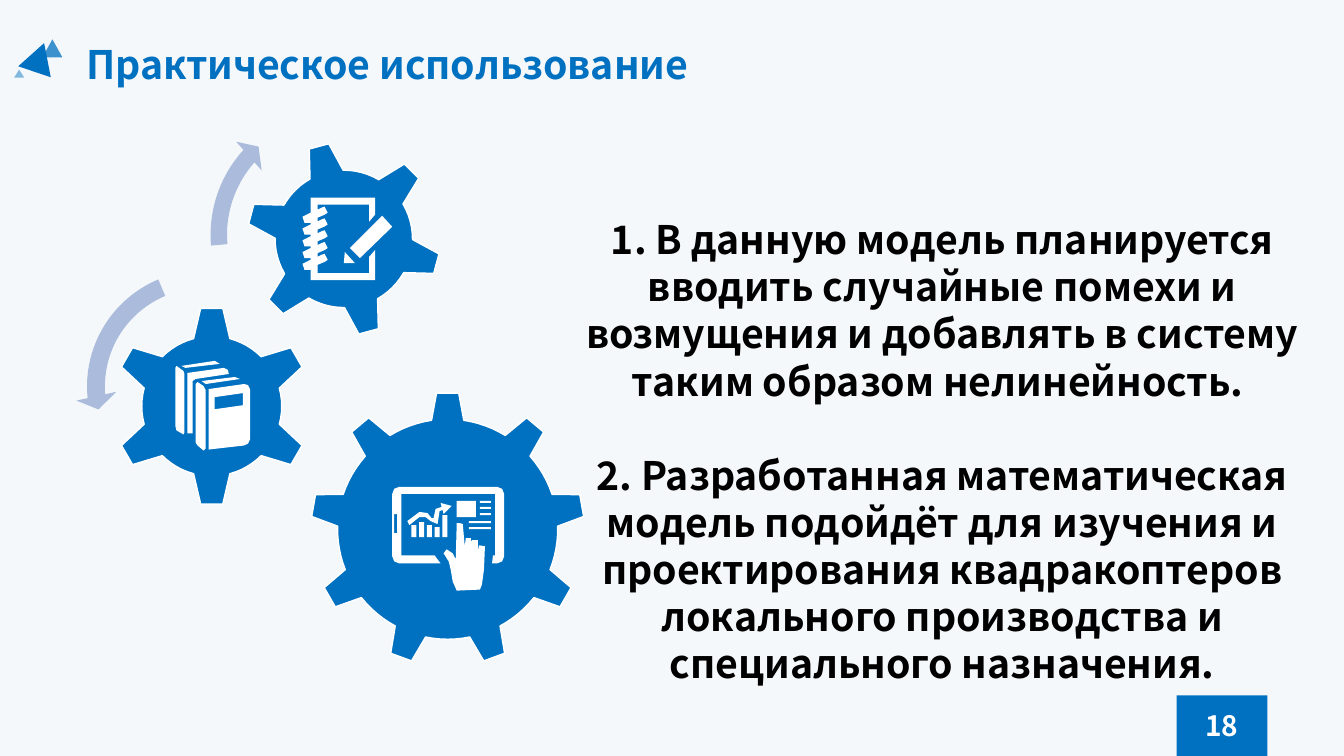
import math

import lxml.etree
import pptx
import pptx.dml.color
import pptx.enum.shapes
import pptx.enum.text
import pptx.oxml.ns
import pptx.util
from pptx.util import Inches

SHAPE = pptx.enum.shapes.MSO_SHAPE
ALIGN = pptx.enum.text.PP_ALIGN
FONT = "Noto Sans CJK SC"
COLORS = {"back": "F5F8FB", "blue": "0070C0", "arrow": "ABBBDC", "white": "FFFFFF", "black": "000000"}

TITLE = "Практическое использование"
POINTS = [
    "1. В данную модель планируется вводить случайные помехи и возмущения "
    "и добавлять в систему таким образом нелинейность. ",
    "2. Разработанная математическая модель подойдёт для изучения и проектирования "
    "квадракоптеров локального производства и специального назначения.",
]
PAGE_NUMBER = "18"

# left, top, width, height, rotation, opacity in percent
TRIANGLES = [
    (0.42, 0.39, 0.2, 0.18, 0, 75),
    (0.22, 0.42, 0.34, 0.3, 18.5, 100),
    (0.14, 0.69, 0.1, 0.08, 0, 47),
]
# centre, teeth, turn in degrees, (half width, distance from centre) of tooth root and tip
GEARS = [
    ((4.44, 5.25), 9, 0, (0.16, 1.08), (0.11, 1.35)),
    ((2.1, 4.03), 6, 0, (0.18, 0.67), (0.11, 0.97)),
    ((3.41, 2.37), 6, -15, (0.17, 0.66), (0.1, 0.95)),
]
ARROWS = [
    (SHAPE.LEFT_CIRCULAR_ARROW, (0.75, 2.57, 2.53, 2.53), (0.07, 4.3, 104.89, 148.38, 0.08)),
    (SHAPE.CIRCULAR_ARROW, (1.98, 0.97, 2.72, 2.72), (0.06, 3.94, 133.14, 105.08, 0.07)),
]


def rectangle(left, top, right, bottom):
    return [(left, top), (right, top), (right, bottom), (left, bottom)]


BOOKS = [
    [(1.86, 3.7), (2.22, 3.65), (2.26, 3.67), (2.27, 3.71), (1.94, 3.76), (1.91, 3.78), (1.91, 4.3), (1.86, 4.3)],
    [(2.13, 3.94), (2.13, 4.06), (2.41, 4.02), (2.41, 3.9)],
    [(2.07, 3.86), (2.07, 4.46), (2.42, 4.42), (2.46, 4.4), (2.48, 4.36), (2.48, 3.86), (2.46, 3.82), (2.42, 3.81)],
    [(1.96, 3.79), (1.94, 3.81), (1.94, 4.39), (1.96, 4.42), (2.02, 4.47), (2.04, 4.45), (2.04, 3.87), (2.02, 3.83)],
    [(2, 3.78), (2.04, 3.81), (2.38, 3.76), (2.33, 3.74)],
    [(1.75, 3.63), (1.82, 3.68), (1.83, 3.71), (1.83, 4.29), (1.82, 4.31), (1.75, 4.27), (1.74, 4.23), (1.74, 3.65)],
    [(1.8, 3.63), (1.84, 3.65), (2.18, 3.61), (2.13, 3.58)],
]

RING_STEP, RING_COUNT = 0.117, 5
RING_RIGHT = [(3.15, 2.08), (3.19, 2.06), (3.22, 2.05), (3.25, 2.11), (3.22, 2.13), (3.15, 2.16)]
RING_LEFT = [(3.08, 2.21), (3.02, 2.21), (3, 2.15), (3.08, 2.11)]
rings_down = [(x, y + ring * RING_STEP) for ring in range(RING_COUNT) for x, y in RING_RIGHT]
rings_up = [(x, y + ring * RING_STEP) for ring in reversed(range(RING_COUNT)) for x, y in RING_LEFT]
NOTEBOOK = [
    [(3.08, 1.96), (3.72, 1.96), (3.72, 2.13), (3.66, 2.2), (3.66, 2.03), (3.15, 2.03), *rings_down,
     (3.15, 2.71), (3.66, 2.71), (3.66, 2.55), (3.72, 2.48), (3.72, 2.78), (3.08, 2.78), *rings_up],
    [(3.41, 2.61), (3.52, 2.61), (3.42, 2.5)],
    [(3.79, 2.14), (3.47, 2.46), (3.57, 2.56), (3.89, 2.25)],
]

TEXT_LINES = [(4.76, 4.97), (4.76, 5.03), (4.76, 5.09), (4.65, 5.17), (4.65, 5.23)]
BAR_TOPS = [5.21, 5.18, 5.21, 5.23, 5.11]
BAR_STEP = 0.077
TABLET = [
    [(3.96, 4.83), (4.93, 4.83), (4.98, 4.85), (5, 4.9), (5, 5.52), (4.98, 5.57), (4.93, 5.59), (4.88, 5.59),
     (4.89, 5.51), (4.91, 5.51), (4.91, 4.9), (3.98, 4.9), (3.98, 5.51), (4.31, 5.51), (4.37, 5.59),
     (3.96, 5.59), (3.91, 5.57), (3.89, 5.52), (3.89, 4.9), (3.91, 4.85)],
    rectangle(3.91, 5.1, 3.94, 5.29),
    rectangle(4.53, 4.97, 4.72, 5.13),
    *[rectangle(left, top, 4.87, top + 0.02) for left, top in TEXT_LINES],
    *[rectangle(4.08 + bar * BAR_STEP, top, 4.13 + bar * BAR_STEP, 5.33) for bar, top in enumerate(BAR_TOPS)],
    # trend arrow
    [(4.04, 5.17), (4.06, 5.21), (4.16, 5.13), (4.22, 5.13), (4.27, 5.17), (4.34, 5.2), (4.36, 5.07),
     (4.39, 5.06), (4.4, 5.1), (4.48, 5.02), (4.37, 4.99), (4.38, 5.03), (4.32, 5.05), (4.3, 5.14),
     (4.28, 5.14), (4.24, 5.09), (4.16, 5.08)],
    # hand
    [(4.61, 5.42), (4.59, 5.2), (4.56, 5.19), (4.53, 5.19), (4.52, 5.55), (4.49, 5.49), (4.43, 5.45),
     (4.4, 5.49), (4.45, 5.57), (4.47, 5.65), (4.49, 5.77), (4.53, 5.86), (4.76, 5.85), (4.78, 5.8),
     (4.8, 5.65), (4.81, 5.42), (4.75, 5.41), (4.74, 5.47), (4.74, 5.36), (4.68, 5.36), (4.67, 5.38),
     (4.67, 5.34), (4.62, 5.34)],
]


def rgb(name):
    return pptx.dml.color.RGBColor.from_string(COLORS[name])


def paint(shape, color, opacity=100):
    shape.shadow.inherit = False
    shape.fill.solid()
    shape.fill.fore_color.rgb = rgb(color)
    shape.line.fill.background()
    if opacity < 100:
        tint = shape.fill._xPr.find(".//" + pptx.oxml.ns.qn("a:srgbClr"))
        lxml.etree.SubElement(tint, pptx.oxml.ns.qn("a:alpha"), val=str(opacity * 1000))


def add_preset(shapes, kind, place, color, opacity=100):
    shape = shapes.add_shape(kind, *map(Inches, place))
    paint(shape, color, opacity)
    return shape


def add_outline(shapes, contours, color):
    """Draw closed contours, given in slide inches, as one freeform."""
    contours = [[(Inches(x), Inches(y)) for x, y in contour] for contour in contours]
    builder = shapes.build_freeform(*contours[0][0])
    for index, contour in enumerate(contours):
        if index:
            builder.move_to(*contour[0])
        builder.add_line_segments(contour[1:], close=True)
    shape = builder.convert_to_shape()
    paint(shape, color)
    return shape


def gear_outline(center, teeth, turn, root, tip, arc_steps=6):
    pitch = 2 * math.pi / teeth
    body = math.hypot(*root)
    edge = math.atan2(*root)
    polar = [(-math.atan2(*tip), math.hypot(*tip)), (math.atan2(*tip), math.hypot(*tip))]
    polar += [(edge + (pitch - 2 * edge) * step / arc_steps, body) for step in range(arc_steps + 1)]
    points = []
    for tooth in range(teeth):
        for angle, radius in polar:
            angle += math.radians(turn) + tooth * pitch
            points.append((center[0] + radius * math.sin(angle), center[1] - radius * math.cos(angle)))
    return points


def add_text(shapes, place, lines, size, color, align, gap=0):
    box = shapes.add_textbox(*map(Inches, place))
    box.text_frame.word_wrap = True
    for index, line in enumerate(lines):
        para = box.text_frame.add_paragraph() if index else box.text_frame.paragraphs[0]
        para.text = line
        para.alignment = align
        if index:
            para.space_before = pptx.util.Pt(gap)
        para.font.name = FONT
        para.font.size = pptx.util.Pt(size)
        para.font.bold = True
        para.font.color.rgb = rgb(color)


def main():
    deck = pptx.Presentation()
    deck.slide_width, deck.slide_height = Inches(13.33), Inches(7.5)
    page = deck.slides.add_slide(deck.slide_layouts[6])
    page.background.fill.solid()
    page.background.fill.fore_color.rgb = rgb("back")
    shapes = page.shapes

    add_text(shapes, (0.76, 0.35, 6.67, 0.57), [TITLE], 28, "blue", ALIGN.LEFT)
    emblem = shapes.add_group_shape()
    for *place, rotation, opacity in TRIANGLES:
        triangle = add_preset(emblem.shapes, SHAPE.ISOSCELES_TRIANGLE, place, "blue", opacity)
        triangle.rotation = rotation

    badge = shapes.add_group_shape()
    add_preset(badge.shapes, SHAPE.RECTANGLE, (11.67, 6.9, 0.9, 0.6), "blue")
    add_text(badge.shapes, (11.8, 6.98, 0.64, 0.44), [PAGE_NUMBER], 20, "white", ALIGN.CENTER)
    add_text(shapes, (5.53, 2.09, 7.63, 4.81), POINTS, 28, "black", ALIGN.CENTER, gap=33.6)

    for gear in GEARS:
        wheel = add_outline(shapes, [gear_outline(*gear)], "blue")
        wheel.line.color.rgb = rgb("white")
        wheel.line.width = pptx.util.Pt(1)
    for kind, place, adjustments in ARROWS:
        arrow = add_preset(shapes, kind, place, "arrow")
        for index, value in enumerate(adjustments):
            arrow.adjustments[index] = value
    for icon in (BOOKS, NOTEBOOK, TABLET):
        add_outline(shapes, icon, "white")

    deck.save("out.pptx")


if __name__ == "__main__":
    main()
